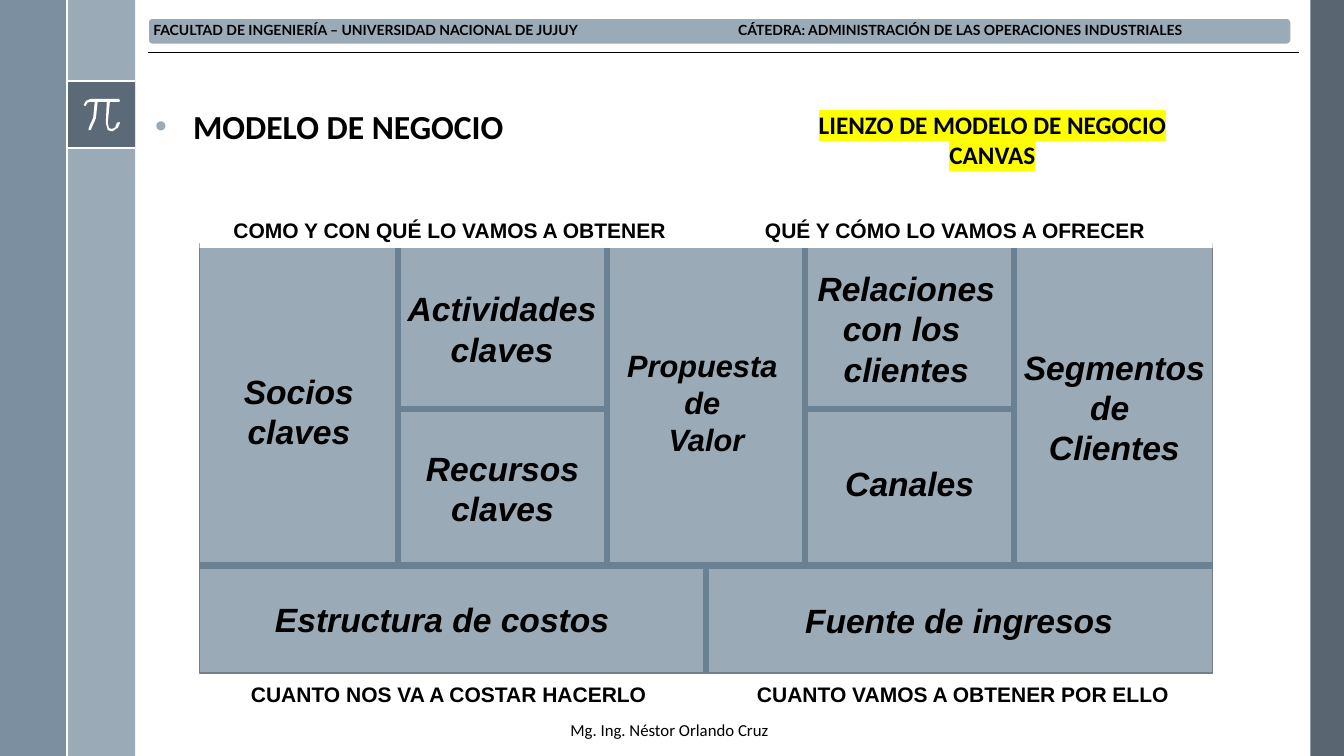
import itertools

import pptx
import pptx.dml.color
import pptx.enum.shapes
import pptx.enum.text
import pptx.oxml.ns
import pptx.util
from lxml import etree

Pt = pptx.util.Pt
SHAPE = pptx.enum.shapes.MSO_SHAPE
ALIGN = pptx.enum.text.PP_ALIGN
ANCHOR = pptx.enum.text.MSO_ANCHOR

BLACK, WHITE, YELLOW = "000000", "FFFFFF", "FFFF00"
STEEL, BLUE, SLATE, EDGE = "9BAAB7", "6A8093", "475562", "737E87"

# Content: places are left, top, width, height in points
HEADING = "LIENZO DE MODELO DE NEGOCIO CANVAS"
TOPIC = "MODELO DE NEGOCIO"
AUTHOR = "Mg. Ing. Néstor Orlando Cruz"
HEADER = ("FACULTAD DE INGENIERÍA – UNIVERSIDAD NACIONAL DE JUJUY"
          "\tCÁTEDRA: ADMINISTRACIÓN DE LAS OPERACIONES INDUSTRIALES")
BANDS = [  # text, top, tab stops
    ("\tCOMO Y CON QUÉ LO VAMOS A OBTENER\tQUÉ Y CÓMO LO VAMOS A OFRECER",
     151.9, (17, 396.7)),
    ("\tCUANTO NOS VA A COSTAR HACERLO\tCUANTO VAMOS A OBTENER POR ELLO",
     483.1, (29.5, 391)),
]
BLOCKS = [  # text, place, size
    ("Estructura de costos", (182.2, 424.1, 267.1, 36), 24),
    ("Fuente de ingresos", (551.5, 424.8, 267.1, 36), 24),
    ("Socios claves", (150.5, 261.4, 126, 65.5), 24),
    ("Segmentos de \nClientes", (713.5, 244.1, 164.9, 94.3), 24),
    ("Propuesta \nde \nValor", (426.2, 244.1, 157, 87.1), 22),
    ("Recursos claves", (284.4, 316.1, 149, 65.5), 24),
    ("Actividades claves", (272.2, 202.3, 172.8, 65.5), 24),
    ("Canales", (575.3, 326.9, 149, 36), 24),
    ("Relaciones con los  clientes", (568.8, 187.9, 157, 94.3), 24),
]
PANELS = [  # place, colour, opacity in percent
    ((936, 0, 24, 540), SLATE, 90),
    ((48, 0, 48.5, 540), STEEL, 100),
    ((0, 0, 48, 540), BLUE, 88),
    ((48, 58, 48.5, 48), SLATE, 75),
]
# Outline of the pi sign, in tenths of a point
PI_SIGN = [
    (850, 706), (648, 706), (615, 720), (598, 749), (605, 756), (612, 756),
    (625, 733), (648, 727), (677, 727), (666, 840), (634, 914), (634, 929),
    (648, 929), (685, 845), (698, 727), (763, 727), (756, 878), (770, 929),
    (792, 936), (806, 936), (842, 912), (857, 878), (850, 871), (835, 878),
    (823, 910), (799, 922), (778, 914), (770, 878), (785, 727), (850, 727),
    (857, 720),
]
CANVAS_LEFT, CANVAS_TOP, CANVAS_WIDTH, CANVAS_HEIGHT = 142.6, 174.2, 723.6, 306.7
COLUMN_WIDTHS = (141.8, 149, 141.8, 149)
SPLIT_Y, FOOT_Y = 292.3, 403.9

deck = pptx.Presentation()
deck.slide_width, deck.slide_height = Pt(960), Pt(540)
slide = deck.slides.add_slide(deck.slide_layouts[1])


def rgb(color):
    return pptx.dml.color.RGBColor.from_string(color)


def sub(parent, tag, **attributes):
    return etree.SubElement(parent, pptx.oxml.ns.qn(tag), **attributes)


def paint(shape, color, line=None, width=1, opacity=100):
    shape.shadow.inherit = False
    shape.fill.solid()
    shape.fill.fore_color.rgb = rgb(color)
    if opacity < 100:
        choice = shape.fill._xPr.find(".//" + pptx.oxml.ns.qn("a:srgbClr"))
        sub(choice, "a:alpha", val=str(opacity * 1000))
    if line:
        shape.line.color.rgb = rgb(line)
        shape.line.width = Pt(width)
    else:
        shape.line.fill.background()
    return shape


def add_box(place, color, kind=SHAPE.RECTANGLE, **style):
    return paint(slide.shapes.add_shape(kind, *map(Pt, place)), color, **style)


def add_line(x1, y1, x2, y2, color=BLUE, width=4.5):
    line = slide.shapes.add_connector(
        pptx.enum.shapes.MSO_CONNECTOR.STRAIGHT, Pt(x1), Pt(y1), Pt(x2), Pt(y2))
    line.line.color.rgb = rgb(color)
    line.line.width = Pt(width)
    sub(line._element.spPr, "a:effectLst")
    return line


def write(shape, text, size, font="Arial", align=ALIGN.LEFT, anchor=ANCHOR.TOP,
          bold=True, italic=False, tabs=()):
    frame = shape.text_frame
    frame.word_wrap = True
    frame.auto_size = pptx.enum.text.MSO_AUTO_SIZE.NONE
    frame.vertical_anchor = anchor
    frame.text = text
    for paragraph in frame.paragraphs:
        paragraph.alignment = align
        if tabs:
            stops = sub(paragraph._p.get_or_add_pPr(), "a:tabLst")
            for stop in tabs:
                sub(stops, "a:tab", pos=str(Pt(stop)), algn="l")
        paragraph.font.name = font
        paragraph.font.size = Pt(size)
        paragraph.font.bold = bold
        paragraph.font.italic = italic
        paragraph.font.color.rgb = rgb(BLACK)
    return frame


def add_text(place, text, size, **style):
    return write(slide.shapes.add_textbox(*map(Pt, place)), text, size, **style)


def move(shape, place):
    shape.left, shape.top, shape.width, shape.height = map(Pt, place)


# Side panels and pi sign
for place, color, opacity in PANELS:
    add_box(place, color, opacity=opacity)
for y in (58, 106):
    add_line(48, y, 96.5, y, WHITE, 1.5)
pi_outline = slide.shapes.build_freeform(*PI_SIGN[0], scale=Pt(1) / 10)
pi_outline.add_line_segments(PI_SIGN[1:], close=True)
paint(pi_outline.convert_to_shape(), WHITE)
add_line(48, 0, 48, 540, WHITE, 1.5)

# Header and author
add_box((105.8, 13, 816.5, 18.7), STEEL, SHAPE.ROUNDED_RECTANGLE, line=WHITE)
header = add_text((106.6, 13.7, 814.3, 17.3), HEADER, 10, font="Lato",
                  anchor=ANCHOR.MIDDLE, tabs=(417.7,))
header.margin_left = header.margin_right = Pt(2.9)
header.margin_top = header.margin_bottom = Pt(2.9)
header.paragraphs[0].line_spacing = 0.9
add_line(105.8, 37.4, 928, 37.4, BLACK, 0.5)
add_text((400.3, 510.5, 232.6, 21.6), AUTHOR, 12, font="Calibri", bold=False)

# Heading and topic
heading, topic = slide.placeholders
move(heading, (575.3, 74.2, 267.1, 51.1))
heading_frame = write(heading, HEADING, 18, font="Calibri", align=ALIGN.CENTER)
marker = sub(heading_frame.paragraphs[0].runs[0]._r.get_or_add_rPr(), "a:highlight")
sub(marker, "a:srgbClr", val=YELLOW)

move(topic, (103.7, 72, 379.4, 54))
topic_line = write(topic, TOPIC, 24, font="Calibri").paragraphs[0]
topic_line.space_before = Pt(10)
topic_format = topic_line._p.get_or_add_pPr()
topic_format.set("marL", str(Pt(27)))
topic_format.set("indent", str(Pt(-27)))
bullet_color = etree.Element(pptx.oxml.ns.qn("a:buClr"))
sub(bullet_color, "a:srgbClr", val=STEEL)
bullet = etree.Element(pptx.oxml.ns.qn("a:buChar"), char="•")
run_defaults = topic_format.find(pptx.oxml.ns.qn("a:defRPr"))
run_defaults.addprevious(bullet_color)
run_defaults.addprevious(bullet)

# Business model canvas
canvas = add_box((CANVAS_LEFT, CANVAS_TOP, CANVAS_WIDTH, CANVAS_HEIGHT), STEEL, line=EDGE)
add_line(CANVAS_LEFT, FOOT_Y, CANVAS_LEFT + CANVAS_WIDTH, FOOT_Y)
dividers = [CANVAS_LEFT + offset for offset in itertools.accumulate(COLUMN_WIDTHS)]
for x in dividers:
    add_line(x, FOOT_Y, x, CANVAS_TOP)
middle = CANVAS_LEFT + CANVAS_WIDTH / 2
foot_divider = add_line(middle, CANVAS_TOP + CANVAS_HEIGHT, middle, FOOT_Y)
foot_divider.begin_connect(canvas, 2)
for left, right in (dividers[:2], dividers[2:]):
    add_line(left, SPLIT_Y, right, SPLIT_Y)
for text, place, size in BLOCKS:
    add_text(place, text, size, align=ALIGN.CENTER, italic=True)
for text, top, tabs in BANDS:
    band = add_box((CANVAS_LEFT, top, CANVAS_WIDTH, 25.2), WHITE)
    write(band, text, 15, anchor=ANCHOR.MIDDLE, tabs=tabs)

deck.save("out.pptx")
